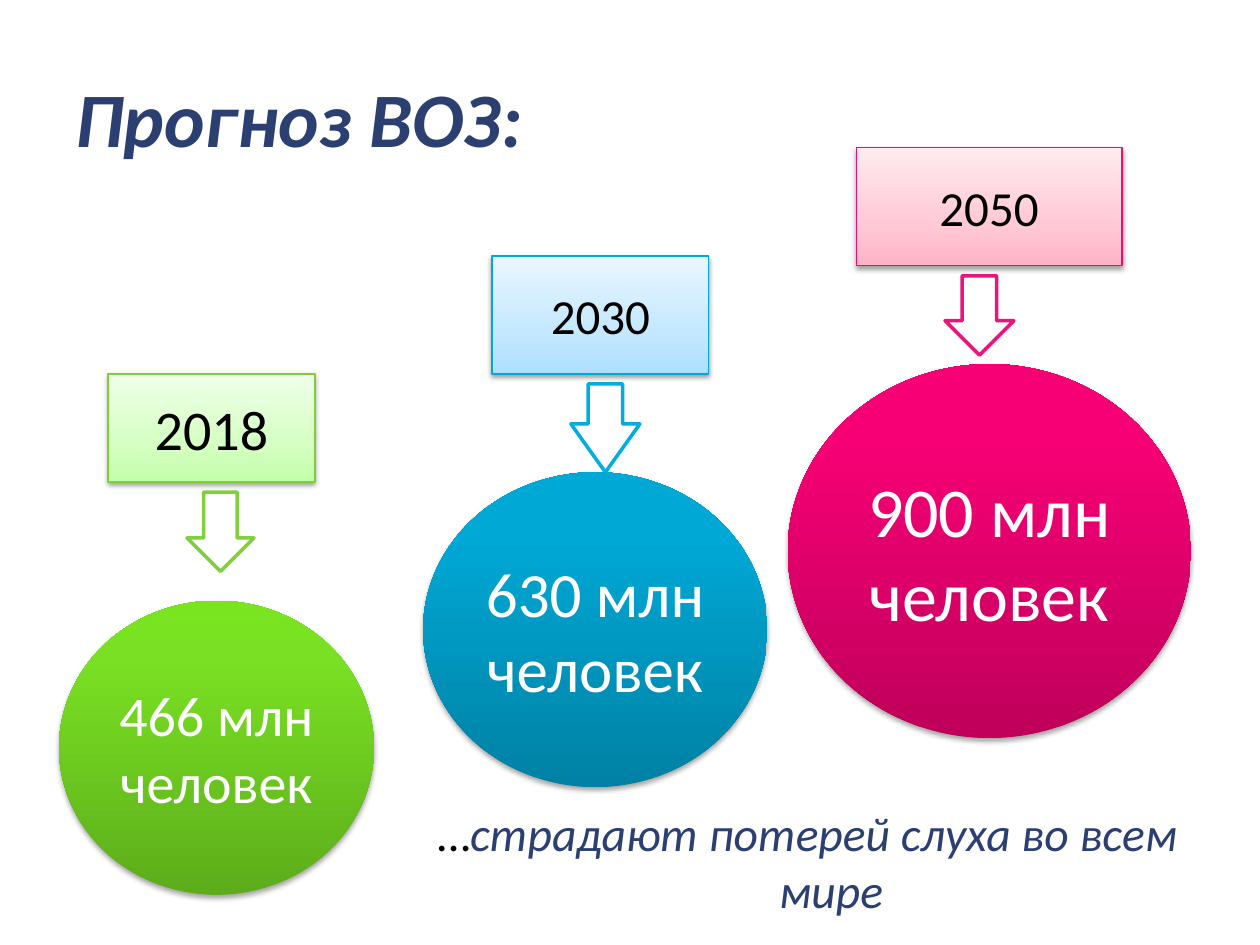
import copy

import pptx
import pptx.util
import pptx.dml.color
import pptx.enum.shapes
import pptx.enum.text
import pptx.oxml
import pptx.oxml.ns

Cm, Pt = pptx.util.Cm, pptx.util.Pt
RGBColor = pptx.dml.color.RGBColor
SHAPE = pptx.enum.shapes.MSO_SHAPE
ALIGN = pptx.enum.text.PP_ALIGN
ANCHOR = pptx.enum.text.MSO_ANCHOR
qn = pptx.oxml.ns.qn

WHITE = RGBColor(0xFF, 0xFF, 0xFF)
BLACK = RGBColor(0, 0, 0)
NAVY = RGBColor(0x2C, 0x3F, 0x71)
# Gradients run from the bottom up
GREENS = [RGBColor.from_string(c) for c in ("5DAD1B", "79E023", "79E520")]
BLUES = [RGBColor.from_string(c) for c in ("0081A4", "00A8D5", "00A8D6")]
PINKS = [RGBColor.from_string(c) for c in ("BE005A", "F70075", "F80076")]
PALE_GREENS = [RGBColor.from_string(c) for c in ("C4FFAA", "D5FFC3", "EFFFE8")]
PALE_BLUES = [RGBColor.from_string(c) for c in ("ACDFFF", "C4E8FF", "E9F6FF")]
PALE_PINKS = [RGBColor.from_string(c) for c in ("FFB3C6", "FFC9D6", "FFEBEF")]
GREEN_EDGE = RGBColor(0x7C, 0xD0, 0x36)
BLUE_EDGE = RGBColor(0x00, 0xA9, 0xD7)
PINK_EDGE = RGBColor(0xEA, 0x0F, 0x77)
GREEN = RGBColor(0x7F, 0xD1, 0x3B)
BLUE = RGBColor(0x00, 0xAD, 0xDC)
PINK = RGBColor(0xEA, 0x15, 0x7A)


class Deck:
    font = "Calibri"

    def __init__(self):
        self.prs = pptx.Presentation()
        self.prs.slide_width, self.prs.slide_height = Cm(25.4), Cm(19.05)
        self.s = self.prs.slides.add_slide(self.prs.slide_layouts[6])

    def style(self, r, size, color, bold=False, italic=False):
        r.font.name, r.font.size = self.font, Pt(size)
        r.font.bold, r.font.italic = bold, italic
        r.font.color.rgb = color

    def text(self, box, parts, size, align=ALIGN.LEFT, anchor=ANCHOR.TOP, hang=0):
        """Add a text box; parts are (text, colour, bold, italic)."""
        tf = self.s.shapes.add_textbox(*map(Cm, box)).text_frame
        tf.word_wrap = True
        tf.vertical_anchor = anchor
        p = tf.paragraphs[0]
        p.alignment = align
        if hang:
            pPr = p._p.get_or_add_pPr()
            pPr.set("marL", str(Cm(hang)))
            pPr.set("indent", str(-Cm(hang)))
        for words, *look in parts:
            r = p.add_run()
            r.text = words
            self.style(r, size, *look)

    def shape(self, kind, box):
        sp = self.s.shapes.add_shape(kind, *map(Cm, box))
        sp.shadow.inherit = False
        return sp

    def shaded(self, kind, box, words, size, color, shades, middle, drop, alpha, edge=None):
        """Add a gradient shape with a soft shadow and centred text."""
        sp = self.shape(kind, box)
        # Three-stop gradient
        sp.fill.gradient()
        sp.fill.gradient_angle = 90
        stops = sp._element.spPr.find(".//" + qn("a:gsLst"))
        stops.insert(1, copy.deepcopy(stops[0]))
        for stop, rgb, pos in zip(sp.fill.gradient_stops, shades, (0, middle, 1)):
            stop.color.rgb, stop.position = rgb, pos
        # Outline
        if edge is None:
            sp.line.fill.background()
        else:
            sp.line.color.rgb, sp.line.width = edge, Pt(0.75)
        # Shadow straight below
        sp._element.spPr.find(qn("a:effectLst")).append(pptx.oxml.parse_xml(
            f'<a:outerShdw {pptx.oxml.ns.nsdecls("a")} blurRad="{Pt(3.1)}" dist="{Pt(drop)}"'
            f' dir="5400000" rotWithShape="0"><a:srgbClr val="000000">'
            f'<a:alpha val="{alpha * 1000}"/></a:srgbClr></a:outerShdw>'))
        # Text
        tf = sp.text_frame
        tf.text = words
        tf.word_wrap = True
        tf.vertical_anchor = ANCHOR.MIDDLE
        for p in tf.paragraphs:
            p.alignment = ALIGN.CENTER
            self.style(p.runs[0], size, color)

    def circle(self, box, words, size, shades):
        self.shaded(SHAPE.OVAL, box, words, size, WHITE, shades, 0.8, 1.8, 35)

    def year(self, box, words, size, shades, edge):
        self.shaded(SHAPE.RECTANGLE, box, words, size, BLACK, shades, 0.35, 1.6, 38, edge)

    def arrow(self, box, color, head=0.5):
        sp = self.shape(SHAPE.DOWN_ARROW, box)
        sp.adjustments[1] = head
        sp.fill.solid()
        sp.fill.fore_color.rgb = WHITE
        sp.line.color.rgb, sp.line.width = color, Pt(2)


def main():
    d = Deck()

    # Title and closing line
    d.text((1.27, 0.76, 22.86, 3.18), [("Прогноз ВОЗ:", NAVY, True, True)], 44,
           anchor=ANCHOR.MIDDLE)
    d.text((7.54, 16.08, 17.48, 2.18),
           [("…", BLACK), ("страдают потерей слуха во всем мире", NAVY, False, True)],
           27.2, ALIGN.CENTER, hang=0.95)

    # People affected
    d.circle((1.19, 12.11, 6.35, 5.93), "466 млн\nчеловек", 32, GREENS)
    d.circle((8.53, 9.52, 6.94, 6.35), "630 млн\nчеловек", 36, BLUES)
    d.circle((15.88, 7.34, 8.13, 7.54), "900 млн\nчеловек", 40, PINKS)

    # Years
    d.year((2.18, 7.54, 4.17, 2.18), "2018", 32, PALE_GREENS, GREEN_EDGE)
    d.year((9.92, 5.16, 4.37, 2.38), "2030", 28, PALE_BLUES, BLUE_EDGE)
    d.year((17.26, 2.98, 5.36, 2.38), "2050", 28, PALE_PINKS, PINK_EDGE)

    # Arrows from year to circle
    d.arrow((3.77, 9.92, 1.35, 1.6), GREEN)
    d.arrow((11.51, 7.74, 1.39, 1.78), BLUE, 0.7)
    d.arrow((19.05, 5.56, 1.39, 1.6), PINK)

    d.prs.save("out.pptx")


if __name__ == "__main__":
    main()
